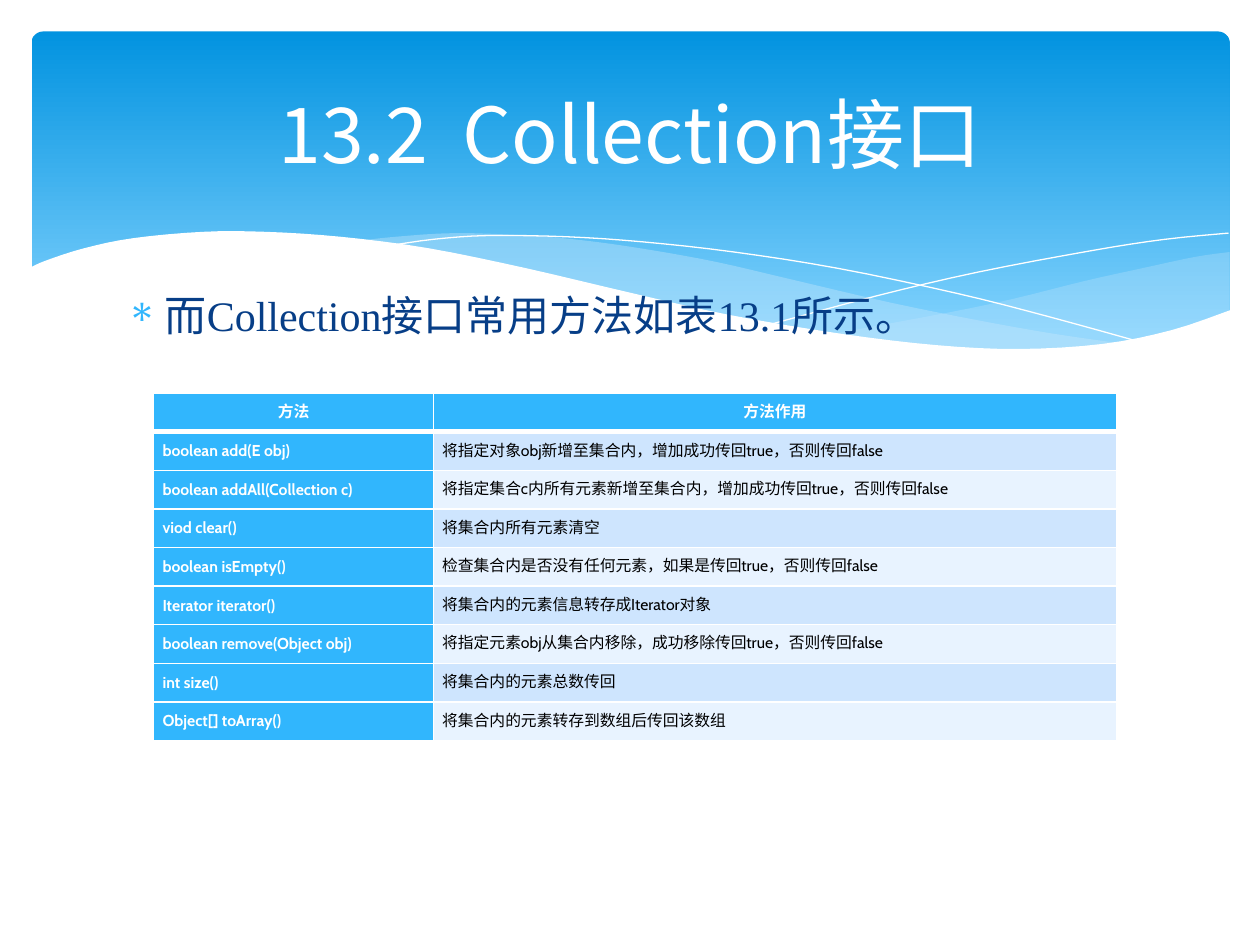
from lxml import etree
from pptx import Presentation
from pptx.dml.color import RGBColor
from pptx.enum.shapes import MSO_SHAPE
from pptx.enum.text import MSO_ANCHOR, PP_ALIGN
from pptx.oxml.ns import qn
from pptx.util import Inches, Pt

ROUND_RECT = MSO_SHAPE.ROUNDED_RECTANGLE
CENTER, LEFT = PP_ALIGN.CENTER, PP_ALIGN.LEFT
MIDDLE, TOP = MSO_ANCHOR.MIDDLE, MSO_ANCHOR.TOP

W, H = 10, 7.5
CJK = "Noto Sans CJK SC"
WHITE, BLACK, NAVY, BLUE = "FFFFFF", "000000", "073E87", "31B6FD"
PALE, BANDS = "C6E7FC", ("CEE5FE", "E8F3FF")

# Knots of the wave curves, in inches
RIGHT_CREST = [(6.61, 2.65), (7.53, 2.48), (8.05, 2.37), (8.61, 2.23),
               (9.06, 2.13), (9.48, 2.04), (9.76, 2)]
RIGHT_TROUGH = [(9.76, 2.47), (9.42, 2.59), (9.05, 2.69), (8.63, 2.75),
                (8.14, 2.78), (7.57, 2.76), (7.05, 2.71), (6.61, 2.65)]
LONG_CREST = [(8.93, 2.73), (8.37, 2.65), (7.75, 2.54), (7.06, 2.4),
              (6.29, 2.22), (5.69, 2.08), (5.14, 1.98), (4.65, 1.91),
              (4.2, 1.87), (3.61, 1.85), (3.13, 1.88), (2.86, 1.91)]
LONG_TROUGH = [(2.86, 1.91), (3.42, 1.99), (4.04, 2.11), (4.91, 2.32),
               (5.66, 2.48), (6.34, 2.61), (6.95, 2.7), (7.48, 2.76),
               (8.07, 2.78), (8.57, 2.77), (8.93, 2.73)]
FALLING_LINE = [(3.09, 1.95), (3.44, 1.9), (3.87, 1.87), (4.5, 1.88),
                (5.1, 1.92), (5.82, 2), (6.65, 2.13), (7.6, 2.33),
                (8.31, 2.51), (9.07, 2.72)]
RISING_LINE = [(6.13, 2.57), (6.95, 2.35), (7.76, 2.16), (8.66, 1.99),
               (9.24, 1.9), (9.75, 1.85)]
FRONT_WAVE = [(9.77, 2.46), (9.3, 2.62), (8.75, 2.73), (8.09, 2.77),
              (7.44, 2.74), (6.68, 2.65), (5.79, 2.5), (5.03, 2.33),
              (4.18, 2.13), (3.4, 1.97), (2.71, 1.88), (2.11, 1.84),
              (1.61, 1.84), (1.06, 1.89), (0.67, 1.97), (0.36, 2.07),
              (0.23, 2.13)]

METHODS = [
    ("方法", "方法作用"),
    ("boolean add(E obj)", "将指定对象obj新增至集合内，增加成功传回true，否则传回false"),
    ("boolean addAll(Collection c)",
     "将指定集合c内所有元素新增至集合内，增加成功传回true，否则传回false"),
    ("viod clear()", "将集合内所有元素清空"),
    ("boolean isEmpty()", "检查集合内是否没有任何元素，如果是传回true，否则传回false"),
    ("Iterator iterator()", "将集合内的元素信息转存成Iterator对象"),
    ("boolean remove(Object obj)",
     "将指定元素obj从集合内移除，成功移除传回true，否则传回false"),
    ("int size()", "将集合内的元素总数传回"),
    ("Object[] toArray()", "将集合内的元素转存到数组后传回该数组"),
]


def rgb(value):
    return RGBColor.from_string(value)


def smooth(knots, steps=4):
    """Return points of a Catmull-Rom curve through the knots."""
    pts = [knots[0], *knots, knots[-1]]
    curve = [knots[0]]
    for a, b, c, d in zip(pts, pts[1:], pts[2:], pts[3:]):
        for i in range(1, steps + 1):
            t = i / steps
            curve.append(tuple(
                (2 * q + (r - p) * t + (2 * p - 5 * q + 4 * r - s) * t ** 2
                 + (3 * q - p - 3 * r + s) * t ** 3) / 2
                for p, q, r, s in zip(a, b, c, d)))
    return curve


def draw_path(slide, points, close):
    start, *rest = [(Inches(x), Inches(y)) for x, y in points]
    builder = slide.shapes.build_freeform(*start)
    builder.add_line_segments(rest, close=close)
    sp = builder.convert_to_shape()
    sp.shadow.inherit = False
    return sp


def add_wave(slide, points, color, opacity=100):
    sp = draw_path(slide, points, True)
    sp.fill.solid()
    sp.fill.fore_color.rgb = rgb(color)
    sp.line.fill.background()
    clr = sp.fill._xPr.find(".//" + qn("a:srgbClr"))
    etree.SubElement(clr, qn("a:alpha"), val=str(opacity * 1000))


def add_hairline(slide, points):
    sp = draw_path(slide, points, False)
    sp.fill.background()
    sp.line.color.rgb = rgb(WHITE)
    sp.line.width = Pt(0)


def add_banner(slide):
    sp = slide.shapes.add_shape(ROUND_RECT, Inches(0.25), Inches(0.25),
                                Inches(W - 0.49), Inches(2.7))
    sp.adjustments[0] = 0.034
    sp.shadow.inherit = False
    sp.line.fill.background()
    sp.fill.gradient()
    sp.fill.gradient_angle = 270
    stops = ((0, "0293E0"), (0.9, "83D3FE"))
    for stop, (position, color) in zip(sp.fill.gradient_stops, stops):
        stop.position = position
        stop.color.rgb = rgb(color)


def write(p, text, size, font, color, bold=False, align=LEFT):
    p.alignment = align
    r = p.add_run()
    r.text = text
    r.font.size, r.font.name, r.font.bold = Pt(size), font, bold
    r.font.color.rgb = rgb(color)
    etree.SubElement(r.font._element, qn("a:ea"), typeface=CJK)


def add_text(slide, box, anchor, *style, **options):
    tf = slide.shapes.add_textbox(*map(Inches, box)).text_frame
    tf.word_wrap = True
    tf.vertical_anchor = anchor
    p = tf.paragraphs[0]
    write(p, *style, **options)
    return p


def add_bullet(p, char, color, indent):
    p.space_before = Pt(4.8)
    pPr = p._p.get_or_add_pPr()
    pPr.set("marL", str(Inches(indent)))
    pPr.set("indent", str(-Inches(indent)))
    bu_color = etree.SubElement(pPr, qn("a:buClr"))
    etree.SubElement(bu_color, qn("a:srgbClr"), val=color)
    etree.SubElement(pPr, qn("a:buChar"), char=char)


def set_borders(cell, **widths):
    """Draw white borders; widths in points by side: L, R, T, B."""
    tcPr = cell._tc.get_or_add_tcPr()
    for i, side in enumerate("LRTB"):
        ln = etree.Element(qn(f"a:ln{side}"), w=str(Pt(widths.get(side, 1))))
        fill = etree.SubElement(ln, qn("a:solidFill"))
        etree.SubElement(fill, qn("a:srgbClr"), val=WHITE)
        tcPr.insert(i, ln)


def add_method_table(slide):
    col_widths, row_height = (2.22, 5.42), 2.76 / len(METHODS)
    table = slide.shapes.add_table(
        len(METHODS), 2, Inches(1.22), Inches(3.12),
        Inches(sum(col_widths)), Inches(2.76)).table
    for col, width in zip(table.columns, col_widths):
        col.width = Inches(width)
    for i, texts in enumerate(METHODS):
        table.rows[i].height = Inches(row_height)
        for j, text in enumerate(texts):
            cell = table.cell(i, j)
            strong = i == 0 or j == 0
            cell.vertical_anchor = MIDDLE
            cell.margin_left = cell.margin_right = Inches(0.07)
            cell.margin_top = cell.margin_bottom = 0
            cell.fill.solid()
            cell.fill.fore_color.rgb = rgb(BLUE if strong else BANDS[(i - 1) % 2])
            set_borders(cell, T=3 if i == 1 else 1, B=3 if i == 0 else 1)
            p = cell.text_frame.paragraphs[0]
            p.line_spacing = Pt(11)
            write(p, text, 9, "Cabin", WHITE if strong else BLACK, strong,
                  LEFT if i else CENTER)


def main():
    prs = Presentation()
    prs.slide_width, prs.slide_height = Inches(W), Inches(H)
    slide = prs.slides.add_slide(prs.slide_layouts[6])

    add_banner(slide)
    add_wave(slide, smooth(RIGHT_CREST) + smooth(RIGHT_TROUGH), PALE, 29)
    add_wave(slide, smooth(LONG_CREST) + smooth(LONG_TROUGH), PALE, 40)
    add_hairline(slide, smooth(FALLING_LINE))
    add_hairline(slide, smooth(RISING_LINE))
    add_wave(slide, smooth(FRONT_WAVE) + [(0.23, 3.29), (9.77, 3.29)], WHITE)

    add_text(slide, (0.5, 0.37, W - 1, 1.37), MIDDLE,
             "13.2  Collection接口", 44, CJK, WHITE, align=CENTER)
    p = add_text(slide, (0.91, 2.25, 8.1, 3.77), TOP,
                 "而Collection接口常用方法如表13.1所示。", 24, "Times New Roman", NAVY)
    add_bullet(p, "∗", BLUE, 0.3)
    add_method_table(slide)
    prs.save("out.pptx")


if __name__ == "__main__":
    main()
